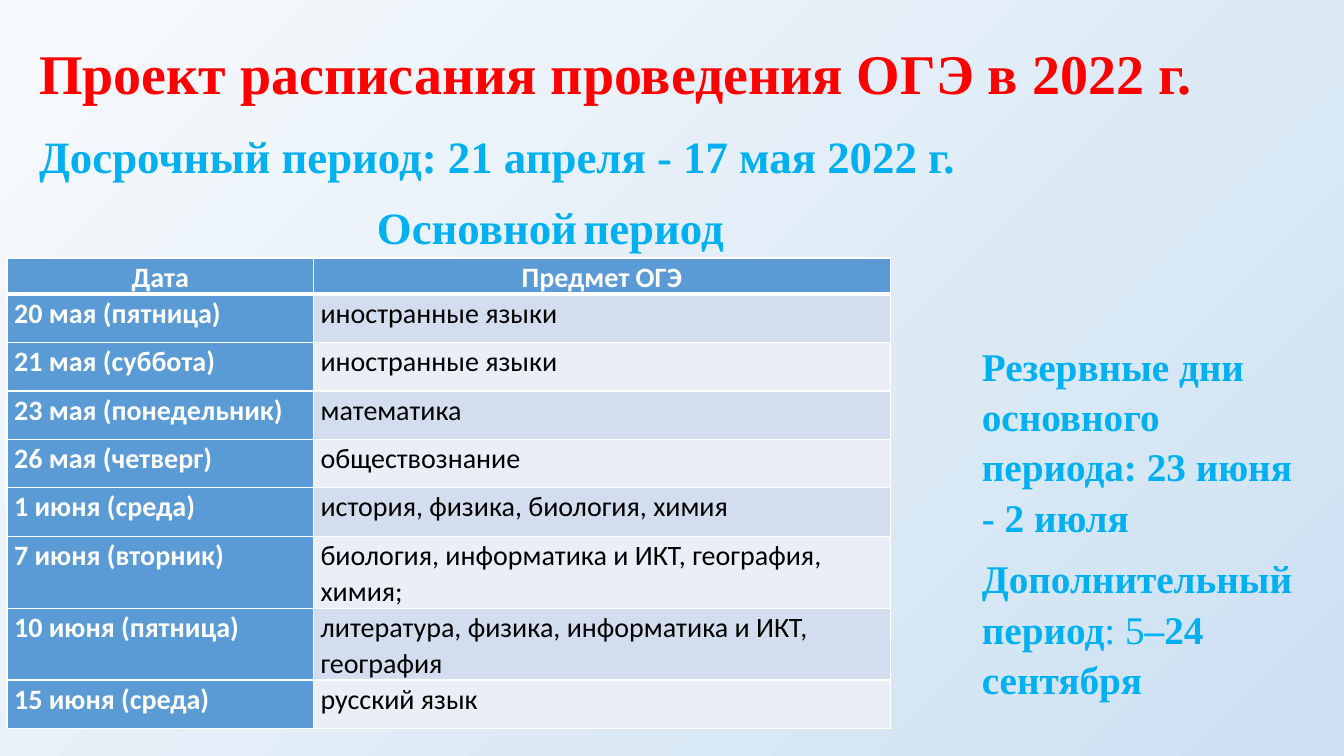
from pptx import Presentation
from pptx.dml.color import RGBColor
from pptx.enum.text import MSO_ANCHOR, PP_ALIGN
from pptx.oxml import parse_xml
from pptx.oxml.ns import nsdecls
from pptx.util import Inches, Pt

RED = RGBColor(0xFF, 0x00, 0x00)
SKY = RGBColor(0x00, 0xB0, 0xF0)
BLACK = RGBColor(0x00, 0x00, 0x00)
WHITE = RGBColor(0xFF, 0xFF, 0xFF)
BLUE = RGBColor(0x5B, 0x9B, 0xD5)
BAND_DARK = RGBColor(0xD2, 0xDE, 0xEF)
BAND_LIGHT = RGBColor(0xEA, 0xEF, 0xF7)
GRADIENT = [(0, RGBColor(0xF7, 0xFA, 0xFD)), (0.97, RGBColor(0xCE, 0xE1, 0xF2))]


def write(para, text, size=32, color=SKY, bold=True, font="Times New Roman",
          spacing=1.07, before=0, after=8, align=PP_ALIGN.LEFT):
    para.line_spacing = spacing
    para.space_before = Pt(before)
    para.space_after = Pt(after)
    para.alignment = align
    span = para.add_run()
    span.text = text
    span.font.name = font
    span.font.size = Pt(size)
    span.font.bold = bold
    span.font.color.rgb = color


def add_box(left, top, width, height, anchor=MSO_ANCHOR.TOP):
    box = page.shapes.add_textbox(Inches(left), Inches(top), Inches(width), Inches(height))
    box.text_frame.word_wrap = True
    box.text_frame.vertical_anchor = anchor
    return box.text_frame


deck = Presentation()
deck.slide_width = Inches(13.33)
deck.slide_height = Inches(7.5)
page = deck.slides.add_slide(deck.slide_layouts[6])

# Background
backdrop = page.background.fill
backdrop.gradient()
backdrop.gradient_angle = 315
for stop, (position, color) in zip(backdrop.gradient_stops, GRADIENT):
    stop.position = position
    stop.color.rgb = color

# Headings
title = add_box(0.29, 0.21, 11.89, 0.9, MSO_ANCHOR.BOTTOM)
write(title.paragraphs[0], "Проект расписания проведения ОГЭ в 2022 г.",
      size=40, color=RED, spacing=0.9, after=0)

early = add_box(0.29, 1.19, 9.89, 0.94)
write(early.paragraphs[0], "Досрочный период: 21 апреля - 17 мая 2022 г.", before=10)

main_period = add_box(3.64, 1.89, 5.2, 0.68).paragraphs[0]
for text, size in [("Основной", 32), (" ", 18), ("период", 32)]:
    write(main_period, text, size=size)

# Reserve days and additional period
side = add_box(9.64, 3.31, 3.31, 4.18)
write(side.paragraphs[0], "Резервные дни основного периода: 23 июня - 2 июля", size=28)
additional = side.add_paragraph()
for text, bold in [("Дополнительный период", True), (": 5", False), ("–24 сентября", True)]:
    write(additional, text, size=28, bold=bold)

# Exam timetable
timetable = [
    ("Дата", "Предмет ОГЭ"),
    ("20 мая (пятница)", "иностранные языки"),
    ("21 мая (суббота)", "иностранные языки"),
    ("23 мая (понедельник)", "математика"),
    ("26 мая (четверг)", "обществознание"),
    ("1 июня (среда)", "история, физика, биология, химия"),
    ("7 июня (вторник)", "биология, информатика и ИКТ, география, химия;"),
    ("10 июня (пятница)", "литература, физика, информатика и ИКТ, география"),
    ("15 июня (среда)", "русский язык"),
]
table = page.shapes.add_table(len(timetable), 2, Inches(0.07), Inches(2.56),
                              Inches(8.76), Inches(4.2)).table
table.columns[0].width = Inches(3.04)
table.columns[1].width = Inches(5.72)

for row, entries in enumerate(timetable):
    table.rows[row].height = Inches(0.48 if row else 0.36)
    for column, text in enumerate(entries):
        cell = table.cell(row, column)
        cell.margin_left = cell.margin_right = Inches(0.07)
        cell.margin_top = cell.margin_bottom = 0
        heading = row == 0 or column == 0
        write(cell.text_frame.paragraphs[0], text, size=20, font="Calibri", after=0,
              color=WHITE if heading else BLACK, bold=heading,
              align=PP_ALIGN.LEFT if row else PP_ALIGN.CENTER)

        # White borders, thicker under the header row
        properties = cell._tc.get_or_add_tcPr()
        for side_name in ("lnL", "lnR", "lnT", "lnB"):
            thick = (row, side_name) in [(0, "lnB"), (1, "lnT")]
            properties.append(parse_xml(
                f'<a:{side_name} {nsdecls("a")} w="{Pt(3 if thick else 1)}">'
                f'<a:solidFill><a:srgbClr val="{WHITE}"/></a:solidFill></a:{side_name}>'))
        cell.fill.solid()
        band = BAND_DARK if row % 2 else BAND_LIGHT
        cell.fill.fore_color.rgb = BLUE if heading else band

deck.save("out.pptx")
